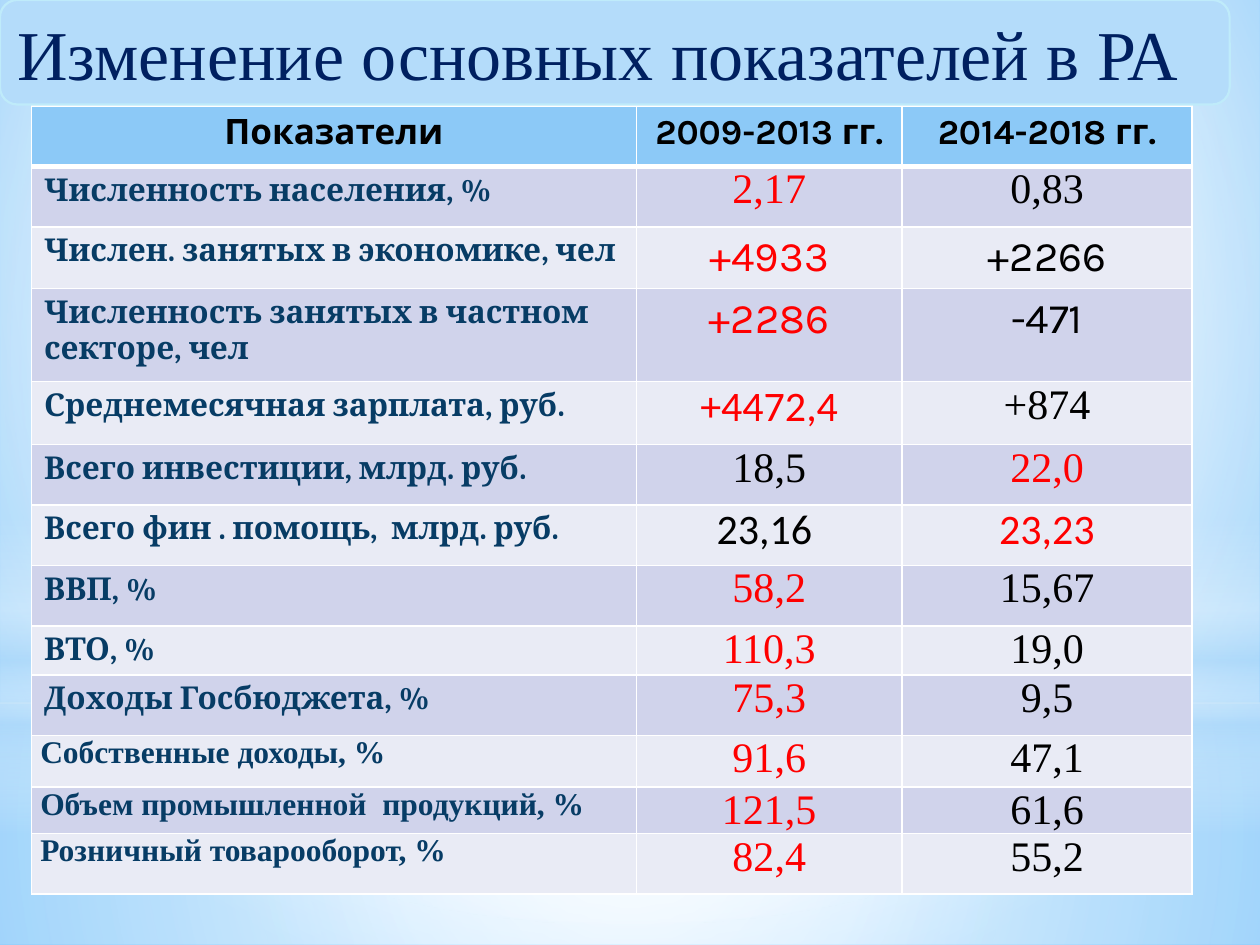
from lxml.etree import SubElement
from pptx import Presentation
from pptx.dml.color import RGBColor
from pptx.enum.shapes import MSO_SHAPE
from pptx.enum.text import MSO_ANCHOR, PP_ALIGN
from pptx.oxml.ns import qn
from pptx.util import Inches, Pt

COLORS = {
    "white": "FFFFFF",
    "pale": "B4DCFA",
    "sky": "9ED5FF",
    "deep_sky": "5BB9FF",
    "title_line": "BFEBFA",
    "title_text": "002060",
    "header": "8CC9F7",
    "odd_row": "D0D3EB",
    "even_row": "E9EBF5",
    "label": "073C65",
    "highlight": "FF0000",
    "black": "000000",
}
TIMES, CAMBRIA, KARLA, CALIBRI = "Times New Roman", "Cambria", "Karla", "Calibri"

HEADERS = ["Показатели", "2009-2013 гг.", "2014-2018 гг."]
COLUMN_WIDTHS = [4.8, 2.11, 2.3]
HEADER_HEIGHT = 0.48
INDICATORS = [
    (0.48, "Численность населения, %", CAMBRIA, ("2,17", TIMES), ("0,83", TIMES), 1),
    (0.46, "Числен. занятых в экономике, чел", CAMBRIA, ("+4933", KARLA), ("+2266", KARLA), 1),
    (0.74, "Численность занятых в частном секторе, чел", CAMBRIA, ("+2286", KARLA), ("-471", KARLA), 1),
    (0.5, "Среднемесячная зарплата, руб.", CAMBRIA, ("+4472,4", CALIBRI), ("+874", TIMES), 1),
    (0.48, "Всего инвестиции, млрд. руб.", CAMBRIA, ("18,5", TIMES), ("22,0", TIMES), 2),
    (0.48, "Всего фин . помощь,  млрд. руб.", CAMBRIA, ("23,16 ", CALIBRI), ("23,23", CALIBRI), 2),
    (0.48, "ВВП, %", CAMBRIA, ("58,2", TIMES), ("15,67", TIMES), 1),
    (0.37, "ВТО, %", CAMBRIA, ("110,3", TIMES), ("19,0", TIMES), 1),
    (0.48, "Доходы Госбюджета, %", CAMBRIA, ("75,3", TIMES), ("9,5", TIMES), 1),
    (0.41, "Собственные доходы, %", TIMES, ("91,6", TIMES), ("47,1", TIMES), 1),
    (0.37, "Объем промышленной  продукций, %", TIMES, ("121,5", TIMES), ("61,6", TIMES), 1),
    (0.48, "Розничный товарооборот, %", TIMES, ("82,4", TIMES), ("55,2", TIMES), 1),
]

CENTER = (50, 50, 50, 50)
GLOWS = [
    (MSO_SHAPE.RECTANGLE, (0, 5.58, 10, 1.92), CENTER,
     [(0, "white", 91), (37, "white", 76), (100, "pale", 79)]),
    (MSO_SHAPE.RECTANGLE, (0, 0, 10, 5.58), CENTER,
     [(0, "white", 89), (48, "white", 62), (100, "pale", 79)]),
    (MSO_SHAPE.RECTANGLE, (0, 4.12, 10, 2.5), None,
     [(0, "white", 0), (29, "white", 30), (45, "pale", 40),
      (55, "white", 26), (65, "pale", 60), (100, "white", 0)]),
    (MSO_SHAPE.OVAL, (0, 1.75, 10, 5.58), CENTER,
     [(0, "white", 100), (56, "white", 0)]),
]


def color(name):
    return RGBColor.from_string(COLORS[name])


def write_text(frame, text, *, font, size, color_name, bold=False, align=PP_ALIGN.LEFT):
    paragraph = frame.paragraphs[0]
    paragraph.alignment = align
    run = paragraph.add_run()
    run.text = text
    run.font.name = font
    run.font.size = Pt(size)
    run.font.bold = bold
    run.font.color.rgb = color(color_name)


def set_gradient(fill, owner, stops, focus=None):
    fill.solid()
    fill.fore_color.rgb = color("white")
    solid = owner.find(".//" + qn("a:solidFill"))
    parent = solid.getparent()
    gradient = SubElement(parent, qn("a:gradFill"), rotWithShape="1")
    parent.replace(solid, gradient)
    stop_list = SubElement(gradient, qn("a:gsLst"))
    for position, name, opacity in stops:
        stop = SubElement(stop_list, qn("a:gs"), pos=str(position * 1000))
        stop_color = SubElement(stop, qn("a:srgbClr"), val=COLORS[name])
        if opacity < 100:
            SubElement(stop_color, qn("a:alpha"), val=str(opacity * 1000))
    if focus:
        circle = SubElement(gradient, qn("a:path"), path="circle")
        edges = {side: str(value * 1000) for side, value in zip("ltrb", focus)}
        SubElement(circle, qn("a:fillToRect"), edges)
    else:
        SubElement(gradient, qn("a:lin"), ang="5400000", scaled="0")


def add_plain_shape(slide, kind, box):
    shape = slide.shapes.add_shape(kind, *(Inches(length) for length in box))
    shape.shadow.inherit = False
    shape.line.fill.background()
    return shape


def add_backdrop(slide):
    set_gradient(slide.background.fill, slide.element,
                 [(0, "sky", 100), (60, "white", 100), (100, "deep_sky", 100)],
                 (20, 10, 20, 60))
    for kind, box, focus, stops in GLOWS:
        shape = add_plain_shape(slide, kind, box)
        set_gradient(shape.fill, shape.element, stops, focus)


def set_borders(cell, bottom=1):
    properties = cell._tc.get_or_add_tcPr()
    widths = {"a:lnL": 1, "a:lnR": 1, "a:lnT": 1, "a:lnB": bottom}
    for index, (tag, width) in enumerate(widths.items()):
        line = SubElement(properties, qn(tag), w=str(Pt(width)))
        fill = SubElement(line, qn("a:solidFill"))
        SubElement(fill, qn("a:srgbClr"), val=COLORS["white"])
        properties.insert(index, line)


def fill_cell(cell, text, fill, border_bottom=1, **text_format):
    cell.fill.solid()
    cell.fill.fore_color.rgb = color(fill)
    if text_format["font"] in (TIMES, CALIBRI):
        cell.margin_left = cell.margin_right = Inches(0.07)
        cell.margin_top = cell.margin_bottom = 0
    set_borders(cell, border_bottom)
    write_text(cell.text_frame, text, **text_format)


def add_indicator_table(slide):
    heights = [HEADER_HEIGHT] + [indicator[0] for indicator in INDICATORS]
    table = slide.shapes.add_table(
        len(heights), len(COLUMN_WIDTHS), Inches(0.25), Inches(0.84),
        Inches(sum(COLUMN_WIDTHS)), Inches(sum(heights))).table
    for column, width in zip(table.columns, COLUMN_WIDTHS):
        column.width = Inches(width)
    for row, height in zip(table.rows, heights):
        row.height = Inches(height)
    for column, header in enumerate(HEADERS):
        fill_cell(table.cell(0, column), header, "header", border_bottom=3, font=KARLA,
                  size=20, color_name="black", bold=True, align=PP_ALIGN.CENTER)
    for row, (_, label, label_font, earlier, later, best) in enumerate(INDICATORS, 1):
        fill = "odd_row" if row % 2 else "even_row"
        fill_cell(table.cell(row, 0), label, fill, font=label_font,
                  size=18, color_name="label", bold=True)
        for column, (value, font) in enumerate((earlier, later), 1):
            fill_cell(table.cell(row, column), value, fill, font=font, size=24,
                      color_name="highlight" if column == best else "black",
                      align=PP_ALIGN.CENTER)


def add_title(slide):
    shape = add_plain_shape(slide, MSO_SHAPE.ROUNDED_RECTANGLE, (0, 0, 9.76, 0.83))
    shape.fill.solid()
    shape.fill.fore_color.rgb = color("pale")
    shape.line.color.rgb = color("title_line")
    shape.line.width = Pt(1.25)
    shape.text_frame.word_wrap = True
    shape.text_frame.vertical_anchor = MSO_ANCHOR.MIDDLE
    write_text(shape.text_frame, "Изменение основных показателей в РА ", font=TIMES,
               size=40, color_name="title_text", align=PP_ALIGN.JUSTIFY)


def main():
    presentation = Presentation()
    presentation.slide_width = Inches(10)
    presentation.slide_height = Inches(7.5)
    slide = presentation.slides.add_slide(presentation.slide_layouts[6])
    add_backdrop(slide)
    add_indicator_table(slide)
    add_title(slide)
    presentation.save("out.pptx")


if __name__ == "__main__":
    main()
